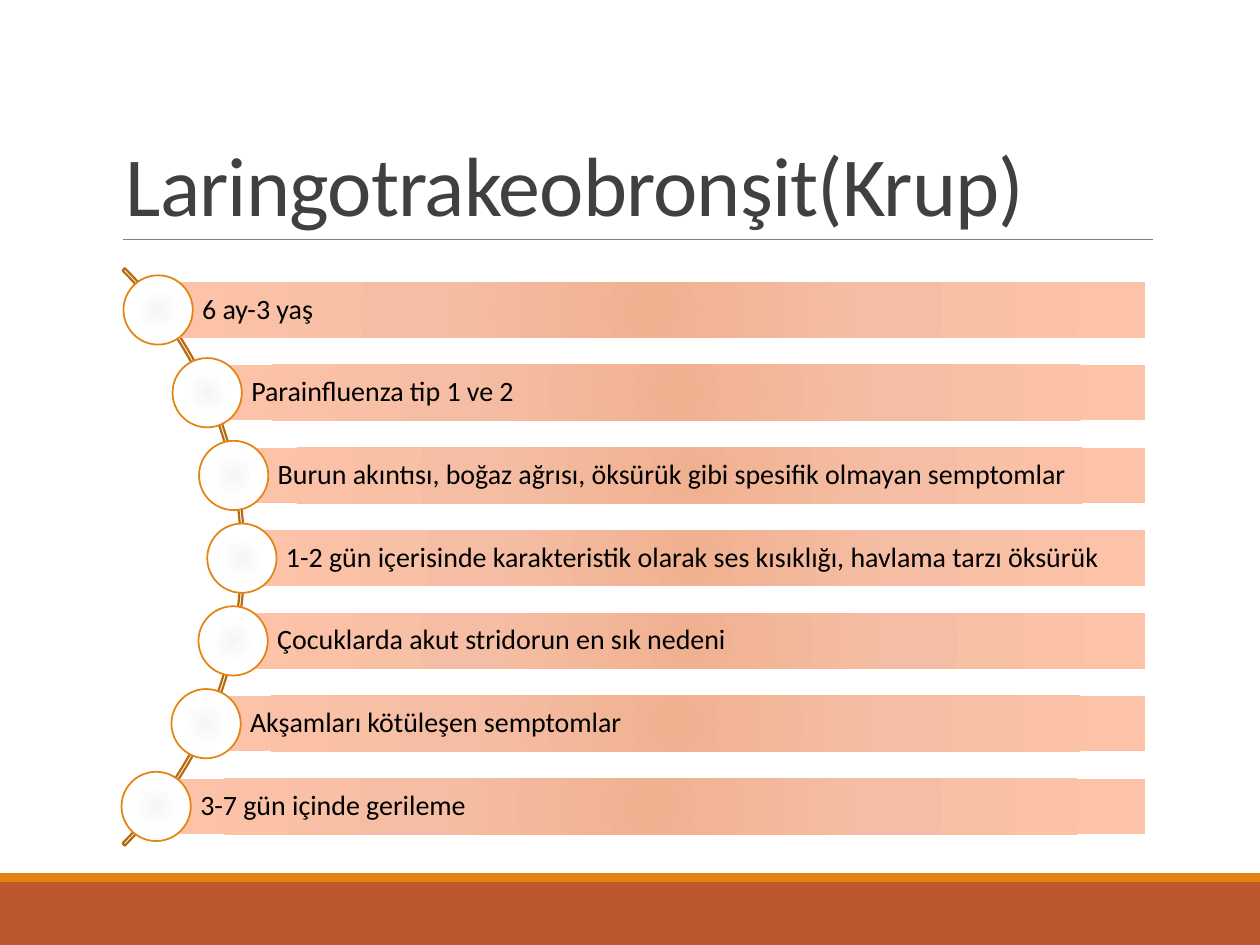
import math

import pptx
import pptx.dml.color
import pptx.enum.shapes
import pptx.enum.text
import pptx.oxml
import pptx.oxml.ns
import pptx.util
from pptx.util import Inches

RGBColor = pptx.dml.color.RGBColor
SHAPE = pptx.enum.shapes.MSO_SHAPE
ANCHOR = pptx.enum.text.MSO_ANCHOR

RUST = RGBColor(0xBD, 0x58, 0x2C)
ORANGE = RGBColor(0xE4, 0x83, 0x12)
BROWN = RGBColor(0xB7, 0x69, 0x0E)
GRAY = RGBColor(0x80, 0x80, 0x80)
DARK = RGBColor(0x40, 0x40, 0x40)
BLACK = RGBColor(0, 0, 0)
PEACH = [(0, RGBColor(0xF0, 0xB1, 0x91)), (45, RGBColor(0xF5, 0xBE, 0xA4)),
         (100, RGBColor(0xFD, 0xC3, 0xA8))]
PEARL = [(0, RGBColor(0xF6, 0xF6, 0xF6)), (45, RGBColor(0xFE, 0xFE, 0xFE)),
         (100, RGBColor(0xFF, 0xFF, 0xFF))]

ITEMS = [
    "6 ay-3 yaş",
    "Parainfluenza tip 1 ve 2",
    "Burun akıntısı, boğaz ağrısı, öksürük gibi spesifik olmayan semptomlar",
    "1-2 gün içerisinde karakteristik olarak ses kısıklığı, havlama tarzı öksürük",
    "Çocuklarda akut stridorun en sık nedeni",
    "Akşamları kötüleşen semptomlar",
    "3-7 gün içinde gerileme",
]
ARC_X, ARC_Y, ARC_SIZE = -1.3, 4.42, 6.48
RADIUS = 3.22
FIRST_Y, LAST_Y = 2.46, 6.4
BAR_RIGHT, BAR_HEIGHT, DOT = 9.09, 0.44, 0.55


class Deck:
    font = "Calibri"

    def __init__(self, prs):
        self.slide = prs.slides.add_slide(prs.slide_layouts[6])

    def shape(self, kind, x, y, w, h, fill=None, line=None, weight=1):
        sp = self.slide.shapes.add_shape(kind, Inches(x), Inches(y), Inches(w), Inches(h))
        sp.shadow.inherit = False
        if isinstance(fill, list):
            self.radial(sp, fill)
        elif fill is not None:
            sp.fill.solid()
            sp.fill.fore_color.rgb = fill
        else:
            sp.fill.background()
        if line is not None:
            sp.line.color.rgb = line
            sp.line.width = pptx.util.Pt(weight)
        else:
            sp.line.fill.background()
        return sp

    def radial(self, sp, stops):
        gs = "".join(f'<a:gs pos="{pos * 1000}"><a:srgbClr val="{color}"/></a:gs>'
                     for pos, color in stops)
        grad = pptx.oxml.parse_xml(
            f'<a:gradFill {pptx.oxml.ns.nsdecls("a")}><a:gsLst>{gs}</a:gsLst>'
            '<a:path path="circle"><a:fillToRect l="100000" t="100000" '
            'r="100000" b="100000"/></a:path></a:gradFill>')
        sp._element.spPr.find(pptx.oxml.ns.qn("a:prstGeom")).addnext(grad)

    def rule(self, x1, y1, x2, y2, color, weight):
        line = self.slide.shapes.add_connector(
            pptx.enum.shapes.MSO_CONNECTOR.STRAIGHT,
            Inches(x1), Inches(y1), Inches(x2), Inches(y2))
        line.line.color.rgb = color
        line.line.width = pptx.util.Pt(weight)
        line._element.spPr.append(
            pptx.oxml.parse_xml(f'<a:effectLst {pptx.oxml.ns.nsdecls("a")}/>'))

    def text(self, sp, text, size, color, spacing, anchor, insets):
        tf = sp.text_frame
        left, top, right, bottom = map(Inches, insets)
        frame = {"word_wrap": True, "vertical_anchor": anchor, "margin_left": left,
                 "margin_top": top, "margin_right": right, "margin_bottom": bottom}
        for name, value in frame.items():
            setattr(tf, name, value)
        p = tf.paragraphs[0]
        p.alignment = pptx.enum.text.PP_ALIGN.LEFT
        p.line_spacing = spacing
        r = p.add_run()
        r.text = text
        for name, value in {"name": self.font, "size": pptx.util.Pt(size)}.items():
            setattr(r.font, name, value)
        r.font.color.rgb = color
        return r

    def title(self, x, y, w, h, text):
        sp = self.slide.shapes.add_textbox(Inches(x), Inches(y), Inches(w), Inches(h))
        r = self.text(sp, text, 48, DARK, 0.85, ANCHOR.BOTTOM, (0.1, 0.05, 0.1, 0.05))
        r._r.get_or_add_rPr().set("spc", "-50")

    def arc(self, cx, cy, size):
        sp = self.shape(SHAPE.BLOCK_ARC, cx - size / 2, cy - size / 2, size, size,
                        line=BROWN, weight=1.25)
        for i, value in enumerate((189, 27, 0.004)):
            sp.adjustments[i] = value

    def item(self, cx, cy, text):
        bar = self.shape(SHAPE.RECTANGLE, cx, cy - BAR_HEIGHT / 2,
                         BAR_RIGHT - cx, BAR_HEIGHT, PEACH)
        self.text(bar, text, 16, BLACK, 0.9, ANCHOR.MIDDLE, (0.35, 0.04, 0.04, 0.04))
        self.shape(SHAPE.OVAL, cx - DOT / 2, cy - DOT / 2, DOT, DOT, PEARL, ORANGE)


def main():
    prs = pptx.Presentation()
    prs.slide_width, prs.slide_height = Inches(10), Inches(7.5)
    deck = Deck(prs)
    deck.shape(SHAPE.RECTANGLE, 0, 7, 10, 0.5, RUST)
    deck.shape(SHAPE.RECTANGLE, 0, 6.93, 10, 0.07, ORANGE)
    deck.rule(0.98, 1.9, 9.15, 1.9, GRAY, 0.5)
    deck.title(0.9, 0.31, 8.25, 1.59, "Laringotrakeobronşit(Krup)")
    deck.arc(ARC_X, ARC_Y, ARC_SIZE)
    pitch = (LAST_Y - FIRST_Y) / (len(ITEMS) - 1)
    for i, text in enumerate(ITEMS):
        y = FIRST_Y + i * pitch
        deck.item(ARC_X + math.sqrt(RADIUS ** 2 - (y - ARC_Y) ** 2), y, text)
    prs.save("out.pptx")


if __name__ == "__main__":
    main()
